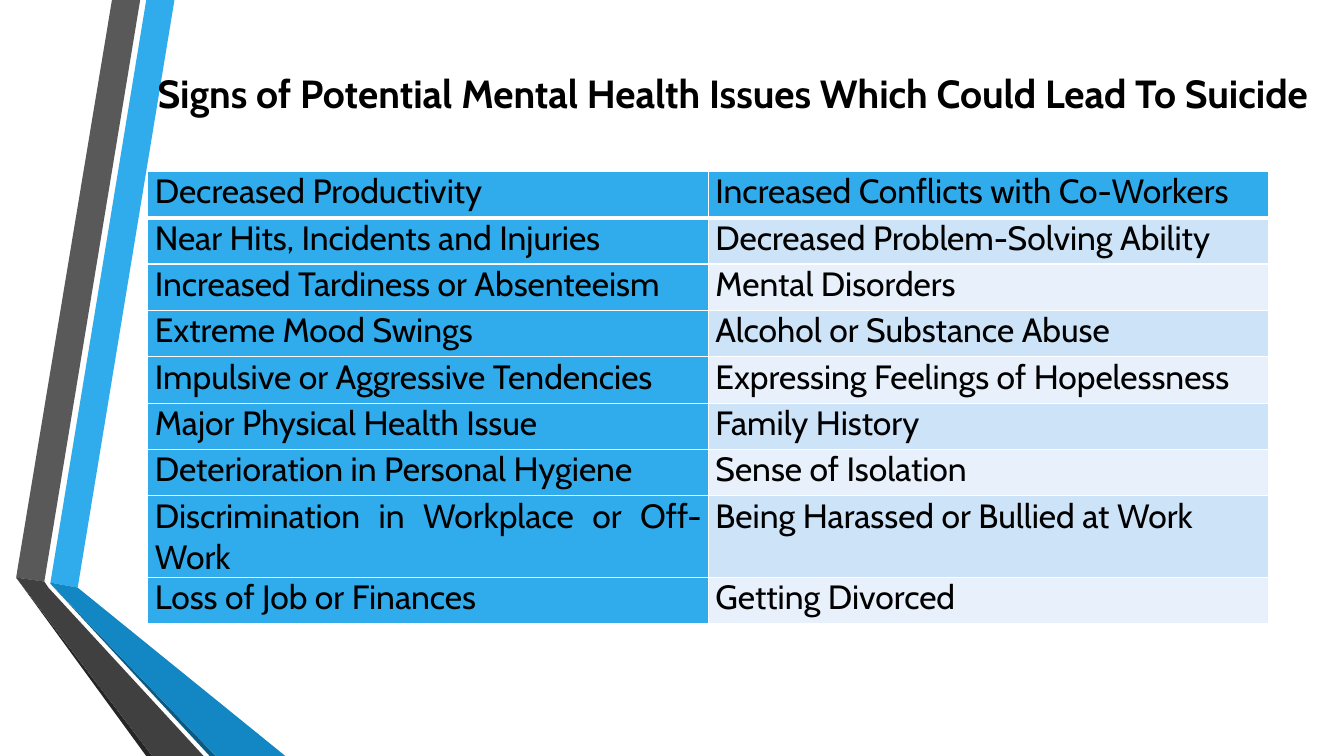
"""Builds a slide with a two-column table of warning signs beside a folded ribbon."""
from lxml import etree
from pptx import Presentation
from pptx.dml.color import RGBColor
from pptx.enum.text import MSO_ANCHOR, PP_ALIGN
from pptx.oxml.ns import qn
from pptx.util import Inches, Pt

TOP = MSO_ANCHOR.TOP
LEFT = PP_ALIGN.LEFT
JUST = PP_ALIGN.JUSTIFY
FONT = "Cabin"
BLACK = RGBColor(0x00, 0x00, 0x00)
WHITE = RGBColor(0xFF, 0xFF, 0xFF)
BLUE = RGBColor(0x30, 0xAC, 0xEC)
DEEP = RGBColor(0x12, 0x87, 0xC3)
NAVY = RGBColor(0x0C, 0x5A, 0x82)
GREY = RGBColor(0x59, 0x59, 0x59)
COAL = RGBColor(0x40, 0x40, 0x40)
INK = RGBColor(0x26, 0x26, 0x26)
PALE = RGBColor(0xE8, 0xF1, 0xFB)
SKY = RGBColor(0xCD, 0xE3, 0xF8)

prs = Presentation()
prs.slide_width = W = Inches(13.33)
prs.slide_height = H = Inches(7.5)
slide = prs.slides.add_slide(prs.slide_layouts[6])
shapes = slide.shapes


def style(para, size, bold, align):
    para.alignment = align
    for run in para.runs:
        run.font.name = FONT
        run.font.size = Pt(size)
        run.font.bold = bold
        run.font.color.rgb = BLACK


def edge(cell, side, width):
    line = etree.SubElement(cell._tc.get_or_add_tcPr(), qn("a:" + side), w=str(Pt(width)))
    fill = etree.SubElement(line, qn("a:solidFill"))
    etree.SubElement(fill, qn("a:srgbClr"), val=str(WHITE))


# Corners are percentages of the slide's width and height.
BANDS = [
    (BLUE, [(3.75, 77.07), (5.78, 77.73), (12.98, 0), (10.88, 0)]),
    (GREY, [(10.43, 0), (8.33, 0), (1.2, 76.4), (3.3, 76.93)]),
    (INK, [(1.2, 76.4), (10.88, 100), (11.33, 100)]),
    (NAVY, [(3.75, 77.2), (15.6, 100), (16.05, 100)]),
    (DEEP, [(3.75, 77.2), (16.05, 100), (21.23, 100), (5.78, 77.73), (3.75, 77.07)]),
    (COAL, [(15.15, 100), (3.6, 77.73), (3.3, 76.93), (1.2, 76.4), (11.33, 100)]),
]
for color, marks in BANDS:
    spots = [(W * x / 100, H * y / 100) for x, y in marks]
    path = shapes.build_freeform(*spots[0])
    path.add_line_segments(spots[1:], close=True)
    band = path.convert_to_shape()
    band.shadow.inherit = False
    band.fill.solid()
    band.fill.fore_color.rgb = color
    band.line.fill.background()

SIGNS = [
    ("Decreased Productivity", "Increased Conflicts with Co-Workers"),
    ("Near Hits, Incidents and Injuries", "Decreased Problem-Solving Ability"),
    ("Increased Tardiness or Absenteeism", "Mental Disorders"),
    ("Extreme Mood Swings", "Alcohol or Substance Abuse"),
    ("Impulsive or Aggressive Tendencies", "Expressing Feelings of Hopelessness"),
    ("Major Physical Health Issue", "Family History"),
    ("Deterioration in Personal Hygiene", "Sense of Isolation"),
    ("Discrimination in Workplace or Off-Work", "Being Harassed or Bullied at Work"),
    ("Loss of Job or Finances", "Getting Divorced"),
]
left = int(W * 0.11)
row_h = Inches(0.46)
grid = shapes.add_table(len(SIGNS), 2, left, Inches(1.7), Inches(11.12), row_h * len(SIGNS)).table
for r, pair in enumerate(SIGNS):
    for c, sign in enumerate(pair):
        cell = grid.cell(r, c)
        cell.margin_left = cell.margin_right = Inches(0.07)
        cell.margin_top = cell.margin_bottom = 0
        cell.vertical_anchor = TOP
        cell.text_frame.text = sign
        style(cell.text_frame.paragraphs[0], 24, False, JUST)
        for side in ("lnL", "lnR", "lnT", "lnB"):
            heavy = (r, side) in ((0, "lnB"), (1, "lnT"))
            edge(cell, side, 3 if heavy else 1)
        cell.fill.solid()
        cell.fill.fore_color.rgb = BLUE if r == 0 or c == 0 else SKY if r % 2 else PALE

title = shapes.add_textbox(left, Inches(0.64), W - left, Inches(0.88))
frame = title.text_frame
frame.word_wrap = True
frame.vertical_anchor = TOP
frame.text = "Signs of Potential Mental Health Issues Which Could Lead To Suicide"
style(frame.paragraphs[0], 28, True, LEFT)

prs.save("out.pptx")
